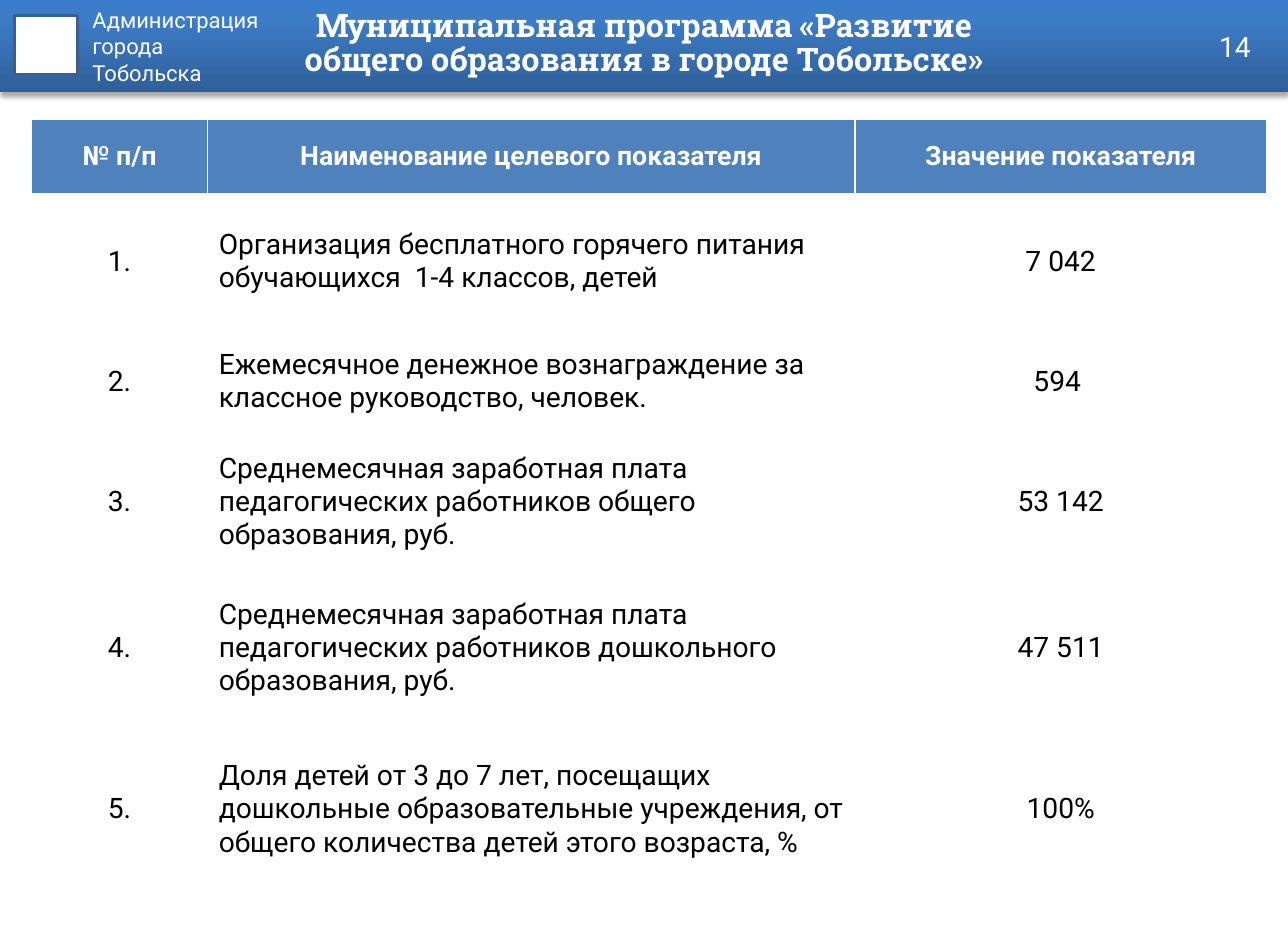
import pptx
import pptx.util
import pptx.oxml
import pptx.oxml.ns
from pptx.dml.color import RGBColor
from pptx.enum.shapes import MSO_SHAPE
from pptx.enum.text import MSO_ANCHOR, MSO_AUTO_SIZE, PP_ALIGN

W, H = 11.42, 8.27
WHITE = RGBColor(0xFF, 0xFF, 0xFF)
BLACK = RGBColor(0x00, 0x00, 0x00)
HEAD_BLUE = RGBColor(0x4F, 0x81, 0xBD)
LOGO_LINE = RGBColor(0x3A, 0x5F, 0x8C)
BAR_STOPS = [
    (0, RGBColor(0x2F, 0x5F, 0x99)),
    (80, RGBColor(0x3D, 0x7C, 0xC7)),
    (100, RGBColor(0x3A, 0x7C, 0xCB)),
]
BODY_FONT, TITLE_FONT = "Roboto", "Roboto Slab"

COLUMNS = [1.56, 5.74, 3.65]
ROW_HEIGHTS = [0.66, 1.2, 0.93, 1.2, 1.39, 1.47]
HEADINGS = ["№ п/п", "Наименование целевого показателя", "Значение показателя"]
INDICATORS = [
    ("Организация бесплатного горячего питания обучающихся  1-4 классов, детей", "7 042"),
    ("Ежемесячное денежное вознаграждение за классное руководство, человек.", "594 "),
    ("Среднемесячная заработная плата педагогических работников общего образования, руб.",
     "53 142"),
    ("Среднемесячная заработная плата педагогических работников дошкольного образования, руб.",
     "47 511"),
    ("Доля детей от 3 до 7 лет, посещащих дошкольные образовательные учреждения, "
     "от общего количества детей этого возраста, %", "100%"),
]


def inches(*lengths):
    """Convert lengths in inches to slide units."""
    return [pptx.util.Inches(v) for v in lengths]


def xml(body):
    """Parse a drawing element given without its namespace declaration."""
    tag, rest = body.split(" ", 1)
    return pptx.oxml.parse_xml(f"{tag} {pptx.oxml.ns.nsdecls('a')} {rest}")


def write(tf, text, size=18, font=BODY_FONT, color=WHITE, bold=False,
          align=PP_ALIGN.LEFT, anchor=MSO_ANCHOR.MIDDLE, spacing=None):
    """Fill a text frame, one paragraph per line of text."""
    tf.word_wrap = True
    tf.vertical_anchor = anchor
    for i, line in enumerate(text.split("\n")):
        p = tf.paragraphs[0] if i == 0 else tf.add_paragraph()
        p.alignment = align
        p.line_spacing = spacing
        r = p.add_run()
        r.text = line
        r.font.size = pptx.util.Pt(size)
        r.font.name = font
        r.font.bold = bold
        r.font.color.rgb = color


def set_insets(tf):
    """Give a text frame the margins used in the header."""
    tf.auto_size = MSO_AUTO_SIZE.NONE
    tf.margin_left, tf.margin_top, tf.margin_right, tf.margin_bottom = inches(
        0.11, 0.06, 0.11, 0.06)


def add_label(s, box, text, **fmt):
    """Add a text box."""
    tf = s.shapes.add_textbox(*inches(*box)).text_frame
    set_insets(tf)
    write(tf, text, **fmt)


def paint_bar(bar):
    """Give the header bar its gradient and soft shadow."""
    bar.fill.gradient()
    bar.fill.gradient_angle = 90
    stops = bar.element.spPr.find(".//" + pptx.oxml.ns.qn("a:gsLst"))
    for old in list(stops):
        stops.remove(old)
    for pos, color in BAR_STOPS:
        stops.append(xml(f'<a:gs pos="{pos * 1000}"><a:srgbClr val="{color}"/></a:gs>'))
    bar.line.fill.background()
    bar.shadow.inherit = False
    bar.element.spPr.find(pptx.oxml.ns.qn("a:effectLst")).append(xml(
        '<a:outerShdw blurRad="39370" dist="22860" dir="5400000" rotWithShape="0">'
        '<a:srgbClr val="000000"><a:alpha val="35000"/></a:srgbClr></a:outerShdw>'))


def add_header(s, box):
    """Draw the bar, emblem square, owner, title and page number."""
    x, y, w, h = box
    bar = s.shapes.add_shape(MSO_SHAPE.RECTANGLE, *inches(*box))
    paint_bar(bar)
    emblem = s.shapes.add_shape(
        MSO_SHAPE.RECTANGLE, *inches(x + 0.13, y + 0.14, 0.56, 0.52))
    emblem.shadow.inherit = False
    emblem.fill.solid()
    emblem.fill.fore_color.rgb = WHITE
    emblem.line.color.rgb = LOGO_LINE
    emblem.line.width = pptx.util.Pt(2)

    title = s.shapes.title
    for shape in (bar, emblem):
        title.element.addprevious(shape.element)
    title.left, title.top, title.width, title.height = inches(x + 2.32, y, 6.78, 0.78)
    set_insets(title.text_frame)
    write(title.text_frame, "Муниципальная программа «Развитие общего образования в городе Тобольске»",
          size=20.7, font=TITLE_FONT, bold=True, align=PP_ALIGN.CENTER, spacing=0.9)

    add_label(s, (x + 0.71, y, 2.68, 1.06), "Администрация\nгорода\nТобольска",
              size=14, anchor=MSO_ANCHOR.TOP)
    add_label(s, (x + w - 2.88, y + 0.19, 2.66, 0.44), "14", align=PP_ALIGN.RIGHT)


def add_borders(cell):
    """Draw thin white lines on the left, right and top of a cell."""
    tcPr = cell._tc.get_or_add_tcPr()
    for i, side in enumerate("LRT"):
        tcPr.insert(i, xml(f'<a:ln{side} w="12700"><a:solidFill><a:srgbClr val="{WHITE}"/>'
                           f'</a:solidFill></a:ln{side}>'))


def add_indicators(s, box):
    """Build the table of target indicators."""
    rows = [HEADINGS] + [(f"{n}.", *item) for n, item in enumerate(INDICATORS, 1)]
    table = s.shapes.add_table(len(rows), len(COLUMNS), *inches(*box)).table
    table.first_row = table.horz_banding = False
    for column, width in zip(table.columns, inches(*COLUMNS)):
        column.width = width
    for row, height in zip(table.rows, inches(*ROW_HEIGHTS)):
        row.height = height
    for i, values in enumerate(rows):
        for j, text in enumerate(values):
            cell = table.cell(i, j)
            cell.vertical_anchor = MSO_ANCHOR.MIDDLE
            head = i == 0
            if head:
                cell.fill.solid()
                cell.fill.fore_color.rgb = HEAD_BLUE
                add_borders(cell)
            else:
                cell.fill.background()
            write(cell.text_frame, text, size=17 if head else 18, bold=head,
                  color=WHITE if head else BLACK,
                  align=PP_ALIGN.LEFT if j == 1 and not head else PP_ALIGN.CENTER)


def main():
    """Build and save the slide."""
    prs = pptx.Presentation()
    prs.slide_width, prs.slide_height = inches(W, H)
    s = prs.slides.add_slide(prs.slide_layouts[5])
    add_header(s, (0, 0, W, 0.82))
    add_indicators(s, (0.28, 1.06, sum(COLUMNS), sum(ROW_HEIGHTS)))
    prs.save("out.pptx")


if __name__ == "__main__":
    main()
